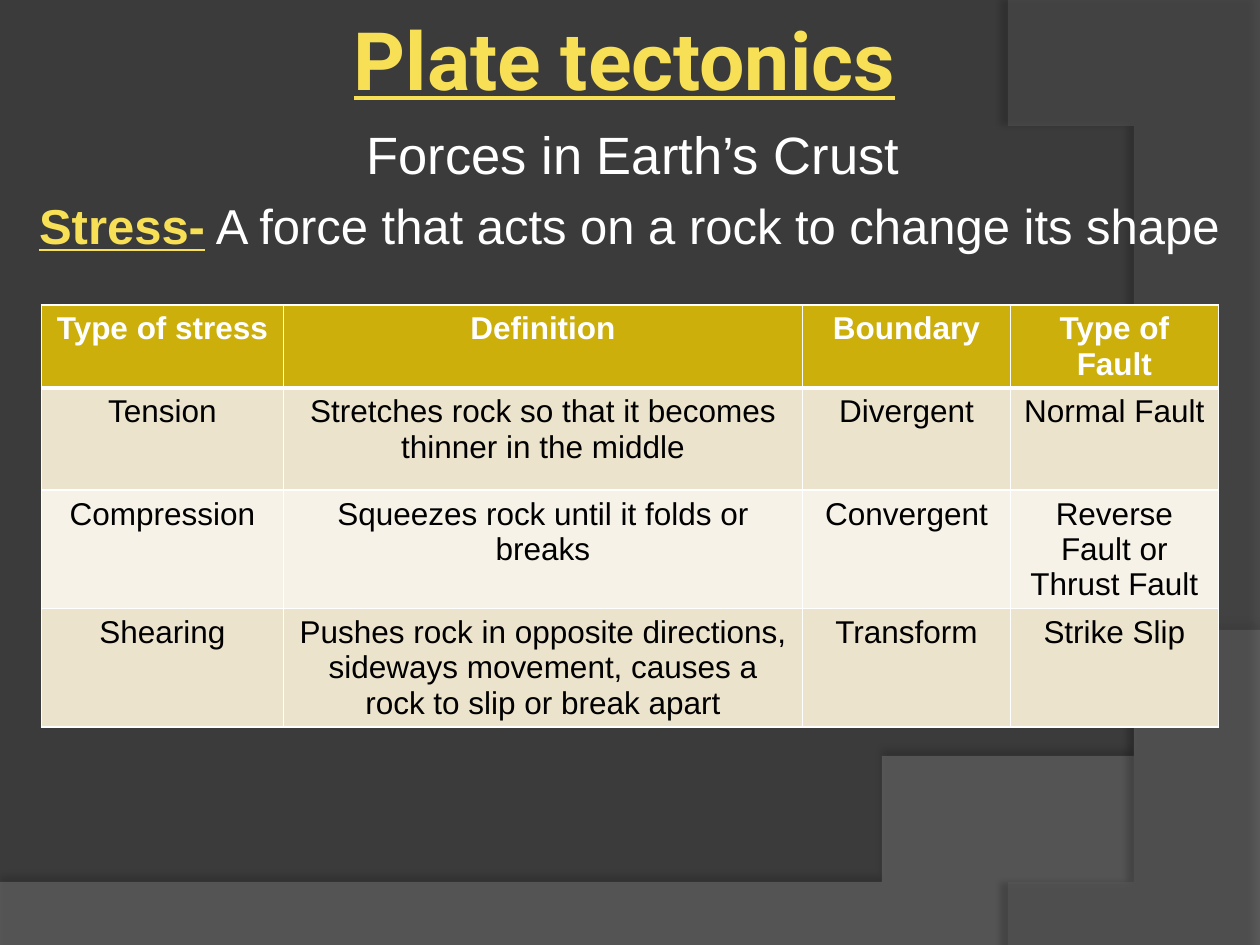
from dataclasses import dataclass
from typing import Any

import lxml.etree
import pptx
import pptx.dml.color
import pptx.enum.text
import pptx.oxml
import pptx.oxml.ns
import pptx.util

Inches = pptx.util.Inches
Pt = pptx.util.Pt
RGBColor = pptx.dml.color.RGBColor
CENTER = pptx.enum.text.PP_ALIGN.CENTER
Point = tuple[float, float]


@dataclass(frozen=True)
class Theme:
    background: str = "3B3B3B"
    accent: str = "F7DF56"
    light: str = "FFFFFF"
    dark: str = "000000"
    header: str = "CCAF0A"
    bands: tuple[str, str] = ("ECE3CC", "F6F2E7")
    title_font: str = "Roboto"
    body_font: str = "Arial"
    title_size: int = 46
    subtitle_size: int = 30
    definition_size: int = 28
    table_size: int = 18


@dataclass(frozen=True)
class Swoosh:
    """A translucent area: straight corners, then one Bezier curve back to the start."""
    corners: tuple[Point, ...]
    controls: tuple[Point, Point]
    end: Point
    color: str
    opacity: int
    shadow_opacity: int
    shadow_distance: float
    shadow_angle: int


THEME = Theme()
SWOOSHES = (
    Swoosh(((0, 7.05), (0, 7.5), (10, 7.5), (10, 5.2)), ((5.59, 7.29), (3.91, 7.19)),
           (0, 7.05), "7F7F7F", 45, 35, 3.5, 270),
    Swoosh(((10, 0.02), (10, 7.5), (8.21, 7.5)), ((9.35, 6.19), (10.18, 3)),
           (8, 0), "5E5E5E", 40, 45, 4, 180),
)
COLUMN_WIDTHS = (1.92, 4.12, 1.65, 1.65)
ROW_HEIGHTS = (0.54, 0.81, 0.93, 0.93)
STRESS_ROWS = (
    ("Type of stress", "Definition", "Boundary", "Type of Fault"),
    ("Tension", "Stretches rock so that it becomes thinner in the middle",
     "Divergent", "Normal Fault"),
    ("Compression", "Squeezes rock until it folds or breaks",
     "Convergent", "Reverse Fault or Thrust Fault"),
    ("Shearing", "Pushes rock in opposite directions, sideways movement, "
     "causes a rock to slip or break apart", "Transform", "Strike Slip"),
)


def add_element(parent: Any, tag: str, **attributes: Any) -> Any:
    values = {name: str(value) for name, value in attributes.items()}
    return lxml.etree.SubElement(parent, pptx.oxml.ns.qn(tag), values)


def add_color(parent: Any, color: str, opacity: int = 100) -> None:
    element = add_element(parent, "a:srgbClr", val=color)
    add_element(element, "a:alpha", val=opacity * 1000)


def curve_points(start: Point, controls: tuple[Point, Point], end: Point,
                 steps: int = 60) -> list[Point]:
    points = []
    for step in range(1, steps + 1):
        t = step / steps
        weights = ((1 - t) ** 3, 3 * t * (1 - t) ** 2, 3 * t * t * (1 - t), t ** 3)
        points.append(tuple(
            sum(weight * point[axis] for weight, point in zip(weights, (start, *controls, end)))
            for axis in (0, 1)))
    return points


def draw_swoosh(slide: Any, swoosh: Swoosh, depth: int) -> None:
    start, *others = swoosh.corners
    points = others + curve_points(swoosh.corners[-1], swoosh.controls, swoosh.end)
    builder = slide.shapes.build_freeform(*start, scale=Inches(1))
    builder.add_line_segments(points, close=True)
    shape = builder.convert_to_shape()
    shape.line.fill.background()
    shape.fill.solid()
    shape.fill.fore_color.rgb = RGBColor.from_string(swoosh.color)
    properties = shape.element.spPr
    fill_color = properties.find(".//" + pptx.oxml.ns.qn("a:srgbClr"))
    add_element(fill_color, "a:alpha", val=swoosh.opacity * 1000)
    shadow = add_element(add_element(properties, "a:effectLst"), "a:outerShdw",
                         blurRad=Pt(4), dist=Pt(swoosh.shadow_distance),
                         dir=swoosh.shadow_angle * 60000, algn="ctr", rotWithShape=0)
    add_color(shadow, THEME.dark, swoosh.shadow_opacity)
    slide.shapes.element.insert(2 + depth, shape.element)  # behind the placeholders


def add_run(paragraph: Any, text: str, color: str, **font_format: Any) -> None:
    run = paragraph.add_run()
    run.text = text
    run.font.color.rgb = RGBColor.from_string(color)
    for name, value in font_format.items():
        setattr(run.font, name, value)


def place(shape: Any, left: float, top: float, width: float, height: float) -> None:
    box = {"left": left, "top": top, "width": width, "height": height}
    for name, value in box.items():
        setattr(shape, name, Inches(value))
    shape.text_frame.auto_size = pptx.enum.text.MSO_AUTO_SIZE.NONE


def fill_title(title: Any) -> None:
    place(title, 0.08, 0, 9.75, 0.92)
    frame = title.text_frame
    frame.vertical_anchor = pptx.enum.text.MSO_ANCHOR.MIDDLE
    for side in ("left", "top", "right", "bottom"):
        setattr(frame, f"margin_{side}", Inches(0.05))
    paragraph = frame.paragraphs[0]
    paragraph.alignment = CENTER
    add_run(paragraph, "Plate tectonics", THEME.accent, name=THEME.title_font,
            size=Pt(THEME.title_size), bold=True, underline=True)


def fill_body(body: Any) -> None:
    place(body, 0.17, 0.92, 9.67, 6.5)
    subtitle = body.text_frame.paragraphs[0]
    definition = body.text_frame.add_paragraph()
    subtitle.alignment = CENTER
    for paragraph in (subtitle, definition):
        paragraph.space_before = Pt(6)
        properties = paragraph._p.get_or_add_pPr()
        properties.set("marL", str(Inches(0.04)))
        properties.set("indent", "0")
        add_element(properties, "a:buNone")
    add_run(subtitle, "Forces in Earth’s Crust", THEME.light,
            name=THEME.body_font, size=Pt(THEME.subtitle_size))
    definition_format = {"name": THEME.body_font, "size": Pt(THEME.definition_size)}
    add_run(definition, "Stress-", THEME.accent, bold=True, underline=True,
            **definition_format)
    add_run(definition, " A force that acts on a rock to change its shape", THEME.light,
            **definition_format)


def draw_borders(cell: Any, widths: dict[str, int]) -> None:
    properties = cell._tc.get_or_add_tcPr()
    for side, width in widths.items():
        line = add_element(properties, f"a:ln{side}", w=Pt(width))
        add_color(add_element(line, "a:solidFill"), THEME.light)


def draw_table(slide: Any) -> None:
    table = slide.shapes.add_table(
        len(STRESS_ROWS), len(COLUMN_WIDTHS), Inches(0.33), Inches(2.42),
        Inches(sum(COLUMN_WIDTHS)), Inches(sum(ROW_HEIGHTS))).table
    for column, width in zip(table.columns, COLUMN_WIDTHS):
        column.width = Inches(width)
    for index, (row, height, texts) in enumerate(zip(table.rows, ROW_HEIGHTS, STRESS_ROWS)):
        row.height = Inches(height)
        is_header = index == 0
        fill = THEME.header if is_header else THEME.bands[(index - 1) % 2]
        borders = {"L": 1, "R": 1, "T": 3 if index == 1 else 1, "B": 3 if is_header else 1}
        for cell, text in zip(row.cells, texts):
            draw_borders(cell, borders)
            cell.fill.solid()
            cell.fill.fore_color.rgb = RGBColor.from_string(fill)
            paragraph = cell.text_frame.paragraphs[0]
            paragraph.alignment = CENTER
            add_run(paragraph, text, THEME.light if is_header else THEME.dark,
                    name=THEME.body_font, size=Pt(THEME.table_size), bold=is_header)


def main() -> None:
    presentation = pptx.Presentation()
    presentation.slide_width, presentation.slide_height = Inches(10), Inches(7.5)
    slide = presentation.slides.add_slide(presentation.slide_layouts[1])
    slide.background.fill.solid()
    slide.background.fill.fore_color.rgb = RGBColor.from_string(THEME.background)
    for depth, swoosh in enumerate(SWOOSHES):
        draw_swoosh(slide, swoosh, depth)
    fill_title(slide.shapes.title)
    fill_body(slide.placeholders[1])
    draw_table(slide)
    presentation.save("out.pptx")


if __name__ == "__main__":
    main()
